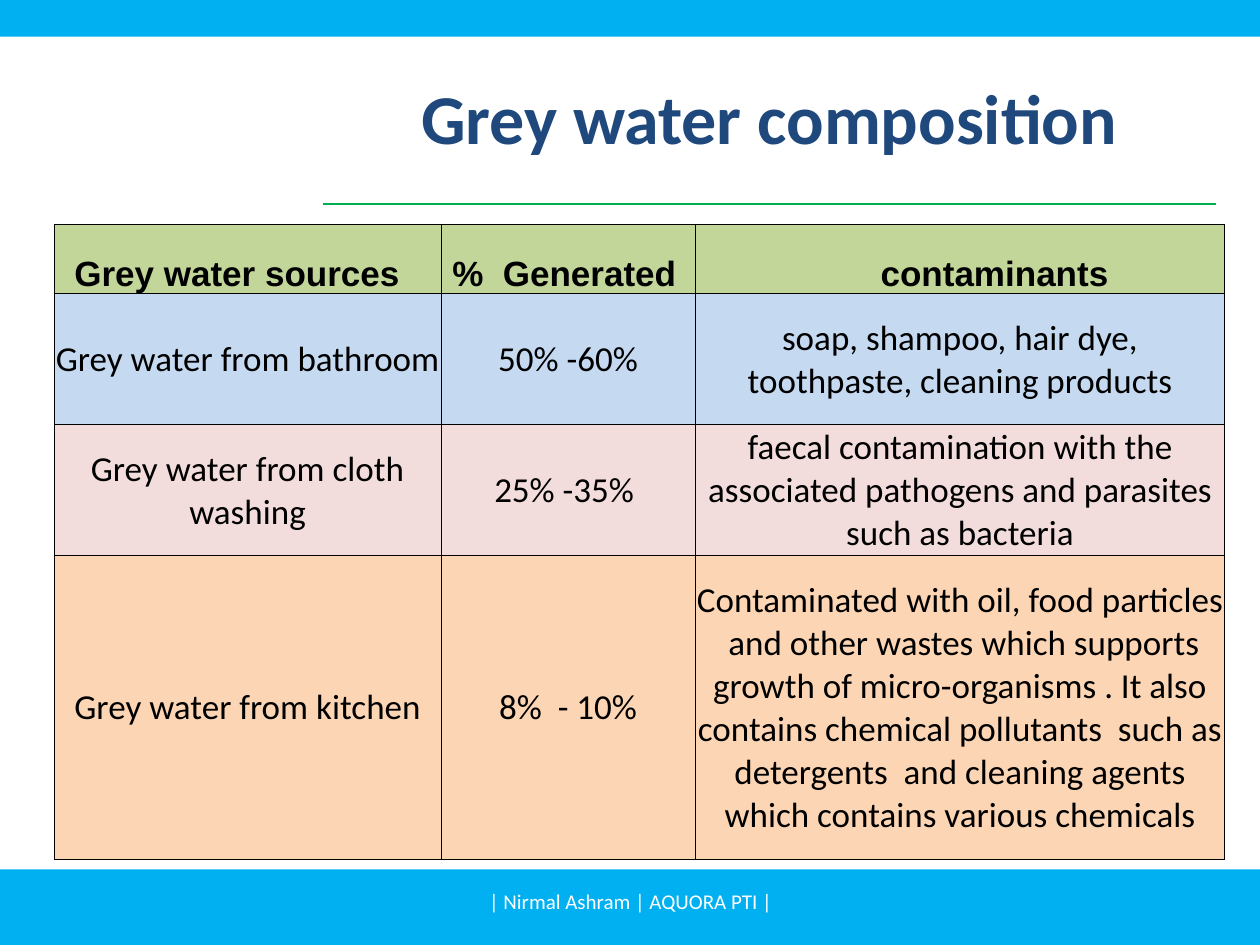
from dataclasses import dataclass

from lxml import etree
from pptx import Presentation
from pptx.dml.color import RGBColor
from pptx.enum.shapes import MSO_CONNECTOR, MSO_SHAPE
from pptx.enum.text import MSO_ANCHOR, PP_ALIGN
from pptx.oxml.ns import qn
from pptx.util import Inches, Pt

RECTANGLE = MSO_SHAPE.RECTANGLE
STRAIGHT = MSO_CONNECTOR.STRAIGHT
MIDDLE, BOTTOM = MSO_ANCHOR.MIDDLE, MSO_ANCHOR.BOTTOM
LEFT, CENTER = PP_ALIGN.LEFT, PP_ALIGN.CENTER
TITLE_ONLY = 5


@dataclass(frozen=True)
class Theme:
    """Colours, fonts and type sizes of the slide."""
    band: str = "00B0F0"
    rule: str = "00B050"
    title: str = "1F497D"
    ink: str = "000000"
    paper: str = "FFFFFF"
    rows: tuple = ("C2D69A", "C5D9F1", "F2DDDC", "FCD5B4")
    body_font: str = "Calibri"
    header_font: str = "Arial"
    title_size: int = 40
    table_size: int = 20
    footer_size: int = 12
    rule_width: float = 0.75
    border_width: float = 0.5


THEME = Theme()
COLUMN_WIDTHS = (3.07, 2.02, 4.2)
ROW_HEIGHTS = (0.55, 1.04, 1.04, 2.41)
HEADER_INDENTS = (0.16, 0.09, 1.47)
CELL_INSET = 0.01
ROWS = (
    ("Grey water sources", "%  Generated", "contaminants"),
    ("Grey water from bathroom", "50% -60%",
     "soap, shampoo, hair dye, toothpaste, cleaning products"),
    ("Grey water from cloth washing", "25% -35% ",
     "faecal contamination with the associated pathogens and parasites "
     "such as bacteria"),
    ("Grey water from kitchen", "8%  - 10%",
     "Contaminated with oil, food particles  and other wastes which supports "
     "growth of micro-organisms . It also contains chemical pollutants  such "
     "as detergents  and cleaning agents which contains various chemicals"),
)


def colour(value):
    """Return the colour for a hex value."""
    return RGBColor.from_string(value)


def write(frame, text, size, ink, font=THEME.body_font, bold=False, align=CENTER):
    """Write one formatted paragraph into a text frame."""
    para = frame.paragraphs[0]
    para.alignment = align
    span = para.add_run()
    span.text = text
    formats = {"name": font, "size": Pt(size), "bold": bold}
    for name, value in formats.items():
        setattr(span.font, name, value)
    span.font.color.rgb = colour(ink)


def add_band(page, box):
    """Draw a plain colour band in the box."""
    band = page.shapes.add_shape(RECTANGLE, *map(Inches, box))
    band.shadow.inherit = False
    band.fill.solid()
    band.fill.fore_color.rgb = colour(THEME.band)
    band.line.fill.background()


def add_rule(page, box):
    """Draw a thin line along the top of the box."""
    left, top, width = box
    rule = page.shapes.add_connector(
        STRAIGHT, *map(Inches, (left, top, left + width, top)))
    rule.line.color.rgb = colour(THEME.rule)
    rule.line.width = Pt(THEME.rule_width)
    etree.SubElement(rule._element.spPr, qn("a:effectLst"))


def add_title(page, box, text):
    """Place the title placeholder in the box and fill it."""
    title = page.shapes.title
    for name, value in zip(("left", "top", "width", "height"), box):
        setattr(title, name, Inches(value))
    title.text_frame.vertical_anchor = MIDDLE
    write(title.text_frame, text, THEME.title_size, THEME.title, bold=True)


def add_borders(cell):
    """Give a cell a thin line on every side."""
    properties = cell._tc.get_or_add_tcPr()
    for position, side in enumerate(("lnL", "lnR", "lnT", "lnB")):
        line = etree.Element(qn(f"a:{side}"), w=str(Pt(THEME.border_width)))
        fill = etree.SubElement(line, qn("a:solidFill"))
        etree.SubElement(fill, qn("a:srgbClr"), val=THEME.ink)
        properties.insert(position, line)


def fill_cell(cell, text, fill, indent=None):
    """Format a cell; an indent marks it as a header."""
    header = indent is not None
    formats = {
        "margin_left": Inches(indent if header else CELL_INSET),
        "margin_right": Inches(CELL_INSET),
        "margin_top": Inches(CELL_INSET),
        "margin_bottom": 0,
        "vertical_anchor": BOTTOM if header else MIDDLE,
    }
    for name, value in formats.items():
        setattr(cell, name, value)
    cell.fill.solid()
    cell.fill.fore_color.rgb = colour(fill)
    add_borders(cell)
    write(cell.text_frame, text, THEME.table_size, THEME.ink,
          font=THEME.header_font if header else THEME.body_font,
          bold=header, align=LEFT if header else CENTER)


def add_composition_table(page, left, top):
    """Build the grey water table from its top left corner."""
    box = (left, top, sum(COLUMN_WIDTHS), sum(ROW_HEIGHTS))
    table = page.shapes.add_table(
        len(ROWS), len(COLUMN_WIDTHS), *map(Inches, box)).table
    table.horz_banding = False
    for column, width in zip(table.columns, COLUMN_WIDTHS):
        column.width = Inches(width)
    for number, (row, height) in enumerate(zip(table.rows, ROW_HEIGHTS)):
        row.height = Inches(height)
        indents = HEADER_INDENTS if number == 0 else (None,) * len(COLUMN_WIDTHS)
        for cell, text, indent in zip(row.cells, ROWS[number], indents):
            fill_cell(cell, text, THEME.rows[number], indent)


def add_footer(page, box, text):
    """Write the centred footer text in the box."""
    frame = page.shapes.add_textbox(*map(Inches, box)).text_frame
    frame.word_wrap = True
    frame.vertical_anchor = MIDDLE
    write(frame, text, THEME.footer_size, THEME.paper)


def main():
    """Build and save the slide."""
    deck = Presentation()
    deck.slide_width, deck.slide_height = Inches(10), Inches(7.5)
    page = deck.slides.add_slide(deck.slide_layouts[TITLE_ONLY])
    page.background.fill.solid()
    page.background.fill.fore_color.rgb = colour(THEME.paper)
    add_band(page, (0, 6.9, 10, 0.6))
    add_rule(page, (2.56, 1.62, 7.09))
    add_band(page, (0, 0, 10, 0.29))
    add_title(page, (2.56, 0.3, 7.09, 1.25), "Grey water composition")
    add_composition_table(page, 0.43, 1.78)
    add_footer(page, (3.42, 6.95, 3.17, 0.4), "| Nirmal Ashram | AQUORA PTI |")
    deck.save("out.pptx")


if __name__ == "__main__":
    main()
